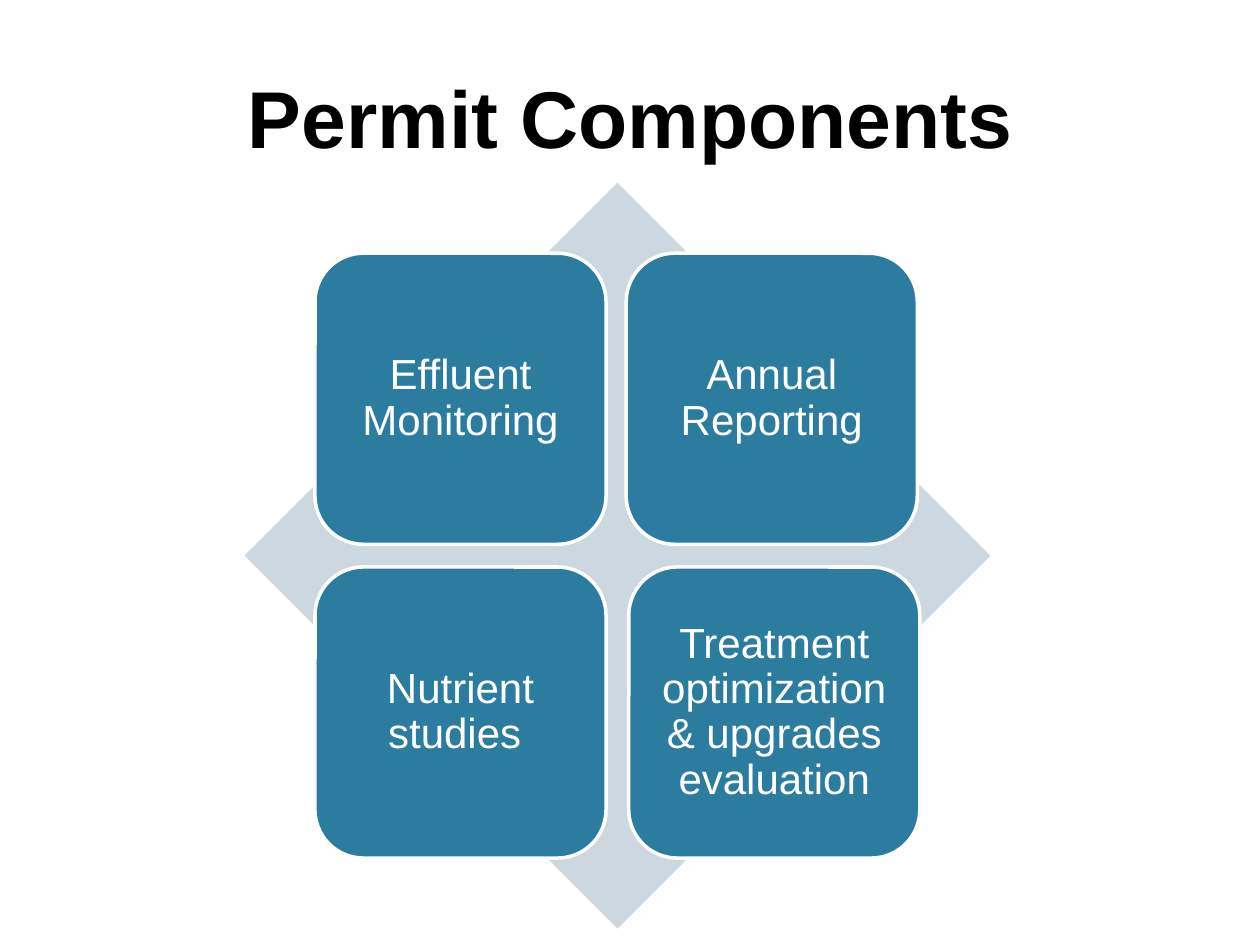
from dataclasses import dataclass

from pptx import Presentation
from pptx.dml.color import RGBColor
from pptx.enum.shapes import MSO_SHAPE
from pptx.enum.text import MSO_ANCHOR, PP_ALIGN
from pptx.util import Pt

DIAMOND = MSO_SHAPE.DIAMOND
ROUNDED = MSO_SHAPE.ROUNDED_RECTANGLE
CENTER = PP_ALIGN.CENTER
MIDDLE, BOTTOM = MSO_ANCHOR.MIDDLE, MSO_ANCHOR.BOTTOM

EMU_PER_PX = 9144  # 100 px to the inch
TILE_SIZE = 231
INSET = 10


@dataclass
class Tile:
    label: str
    x: int
    y: int


TILES = [
    Tile("Effluent Monitoring", 250, 201),
    Tile("Annual Reporting", 497, 201),
    Tile("Nutrient studies ", 250, 450),
    Tile("Treatment optimization & upgrades evaluation", 499, 450),
]


def px(*lengths: int) -> list[int]:
    return [n * EMU_PER_PX for n in lengths]


def color(hex_code: str) -> RGBColor:
    return RGBColor.from_string(hex_code)


def write(sp, text: str, *, size: int, fill: str, bold: bool = False,
          anchor=MIDDLE, spacing: float = 1.0) -> None:
    tf = sp.text_frame
    tf.word_wrap = True
    tf.vertical_anchor = anchor
    tf.margin_left, tf.margin_top, tf.margin_right, tf.margin_bottom = px(*[INSET] * 4)
    p = tf.paragraphs[0]
    p.alignment = CENTER
    p.line_spacing = spacing
    r = p.add_run()
    r.text = text
    r.font.name = "Arial"
    r.font.size = Pt(size)
    r.font.bold = bold
    r.font.color.rgb = color(fill)


def add_block(s, kind, x: int, y: int, size: int, fill: str):
    sp = s.shapes.add_shape(kind, *px(x, y, size, size))
    sp.shadow.inherit = False
    sp.fill.solid()
    sp.fill.fore_color.rgb = color(fill)
    sp.line.fill.background()
    return sp


def add_tile(s, tile: Tile) -> None:
    sp = add_block(s, ROUNDED, tile.x, tile.y, TILE_SIZE, "2C7C9F")
    sp.line.color.rgb = color("FFFFFF")
    sp.line.width = Pt(2)
    write(sp, tile.label, size=24, fill="FFFFFF", spacing=0.9)


def main() -> None:
    prs = Presentation()
    prs.slide_width, prs.slide_height = px(1000, 750)
    s = prs.slides.add_slide(prs.slide_layouts[6])

    # Title
    title = s.shapes.add_textbox(*px(60, -5, 880, 146))
    write(title, "Permit Components", size=46, fill="000000", bold=True, anchor=BOTTOM)

    # Matrix: diamond behind four tiles
    add_block(s, DIAMOND, 194, 145, 592, "CDD7DF")
    for tile in TILES:
        add_tile(s, tile)

    prs.save("out.pptx")


if __name__ == "__main__":
    main()
